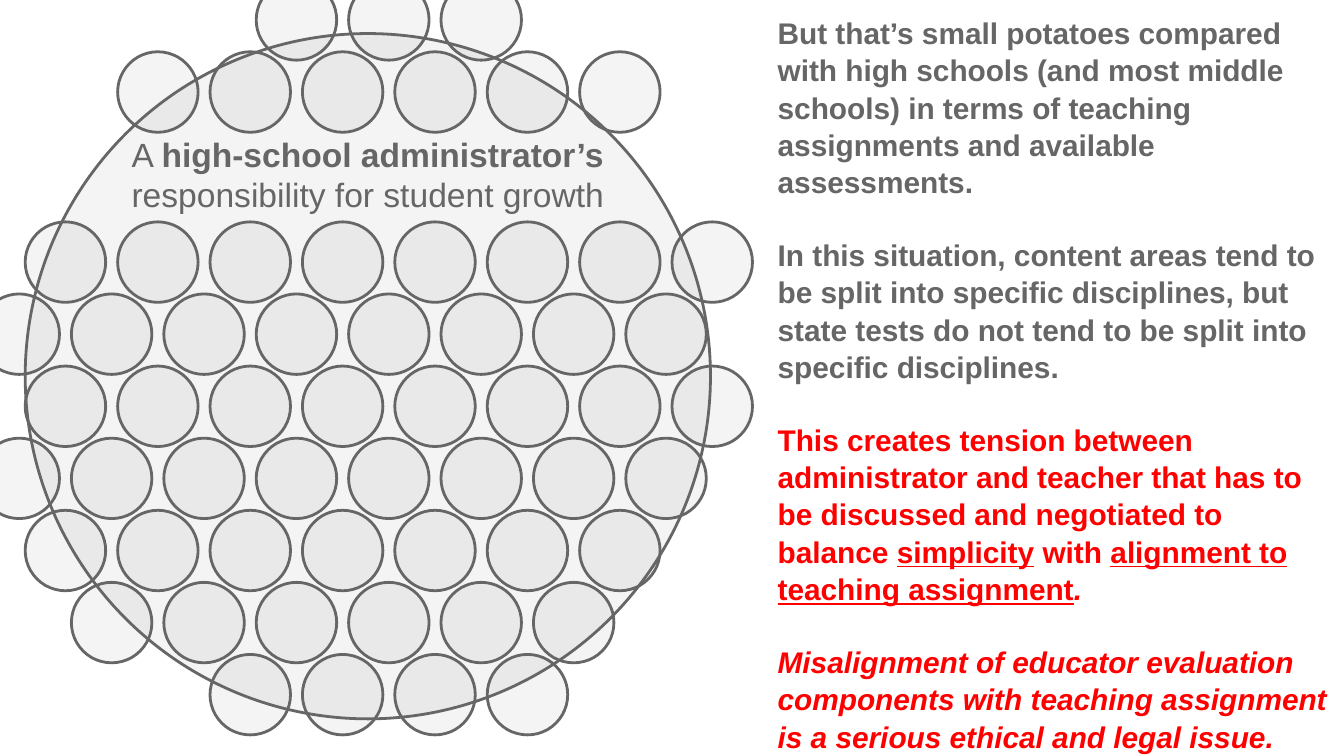
from dataclasses import dataclass

from lxml.etree import SubElement
from pptx import Presentation
from pptx.dml.color import RGBColor
from pptx.enum.shapes import MSO_SHAPE
from pptx.enum.text import MSO_ANCHOR, MSO_AUTO_SIZE, PP_ALIGN
from pptx.oxml.ns import qn
from pptx.util import Pt

PX = 4762.5
CIRCLE = 115
LEFT = 36
HALF_PITCH = 66
ROW_PITCH = 103
BLOCKS = [
    (-29, [(5, 3), (2, 6)]),
    (317, [(0, 8), (-1, 8), (0, 8), (-1, 8), (0, 7), (1, 6), (4, 4)]),
]


@dataclass(frozen=True)
class Theme:
    """Colours, font and sizes of the slide."""
    grey: str = "666666"
    red: str = "FF0000"
    font: str = "Arial"
    heading: int = 18
    body: int = 16
    line: float = 1.5
    opacity: int = 7


THEME = Theme()


def px(n):
    """Turn px into EMU."""
    return round(n * PX)


def add_run(p, text, size=THEME.body, color=THEME.grey, bold=True, italic=False, underline=False):
    """Append a formatted run to a paragraph."""
    r = p.add_run()
    r.text = text
    f = r.font
    f.name, f.size, f.bold = THEME.font, Pt(size), bold
    f.italic, f.underline = italic, underline
    f.color.rgb = RGBColor.from_string(color)


def set_frame(tf, inset):
    """Give a text frame equal insets, wrapping and a top anchor."""
    tf.word_wrap = True
    tf.auto_size = MSO_AUTO_SIZE.NONE
    tf.vertical_anchor = MSO_ANCHOR.TOP
    tf.margin_left = tf.margin_top = tf.margin_right = tf.margin_bottom = px(inset)


def add_circle(shapes, x, y, d):
    """Add a translucent outlined circle."""
    sp = shapes.add_shape(MSO_SHAPE.OVAL, px(x), px(y), px(d), px(d))
    sp.shadow.inherit = False
    sp.fill.solid()
    sp.fill.fore_color.rgb = RGBColor.from_string(THEME.grey)
    color = sp.fill._xPr.find(qn("a:solidFill"))[0]
    SubElement(color, qn("a:alpha"), val=str(THEME.opacity * 1000))
    sp.line.color.rgb = RGBColor.from_string(THEME.grey)
    sp.line.width = Pt(THEME.line)
    return sp


def add_responsibility(shapes):
    """Add the large circle with its label."""
    tf = add_circle(shapes, LEFT, 48, 979).text_frame
    set_frame(tf, 0)
    lines = [
        [("A ", False), ("high-school administrator’s", True)],
        [("responsibility for student growth", False)],
    ]
    for i, runs in enumerate(lines):
        p = tf.add_paragraph() if i else tf.paragraphs[0]
        p.alignment = PP_ALIGN.CENTER
        for text, bold in runs:
            add_run(p, text, size=THEME.heading, bold=bold)


def add_student_circles(shapes):
    """Pack the small circles in staggered rows."""
    for top, rows in BLOCKS:
        for i, (start, count) in enumerate(rows):
            for j in range(count):
                x = LEFT + (start + 2 * j) * HALF_PITCH
                add_circle(shapes, x, top + i * ROW_PITCH, CIRCLE)


def fill_body(sp, paragraphs):
    """Place the body and write its paragraphs without bullets."""
    sp.left, sp.top, sp.width, sp.height = px(1092), 0, px(828), px(1080)
    tf = sp.text_frame
    set_frame(tf, 19)
    for i, runs in enumerate(paragraphs):
        p = tf.add_paragraph() if i else tf.paragraphs[0]
        p.alignment = PP_ALIGN.LEFT
        p.line_spacing = 1.04
        p.space_before = Pt(19.2 if i else 0)
        pPr = p._p.get_or_add_pPr()
        pPr.set("marL", "0")
        pPr.set("indent", "0")
        SubElement(pPr, qn("a:buNone"))
        for text, style in runs:
            add_run(p, text, **style)


def main():
    """Build and save the slide."""
    prs = Presentation()
    prs.slide_width, prs.slide_height = px(1920), px(1080)
    slide = prs.slides.add_slide(prs.slide_layouts[1])
    title = slide.shapes.title._element
    title.getparent().remove(title)
    red = {"color": THEME.red}
    key = {**red, "underline": True}
    warning = {**red, "italic": True}
    add_responsibility(slide.shapes)
    fill_body(slide.placeholders[1], [
        [("But that’s small potatoes compared with high schools (and most middle schools) "
          "in terms of teaching assignments and available assessments.", {})],
        [("In this situation, content areas tend to be split into specific disciplines, "
          "but state tests do not tend to be split into specific disciplines.", {})],
        [("This creates tension between administrator and teacher that has to be discussed "
          "and negotiated to balance ", red),
         ("simplicity", key), (" with ", red),
         ("alignment to teaching assignment", key), (".", warning)],
        [("Misalignment of educator evaluation components with teaching assignment "
          "is a serious ethical and legal issue.", warning)],
    ])
    add_student_circles(slide.shapes)
    prs.save("out.pptx")


if __name__ == "__main__":
    main()
